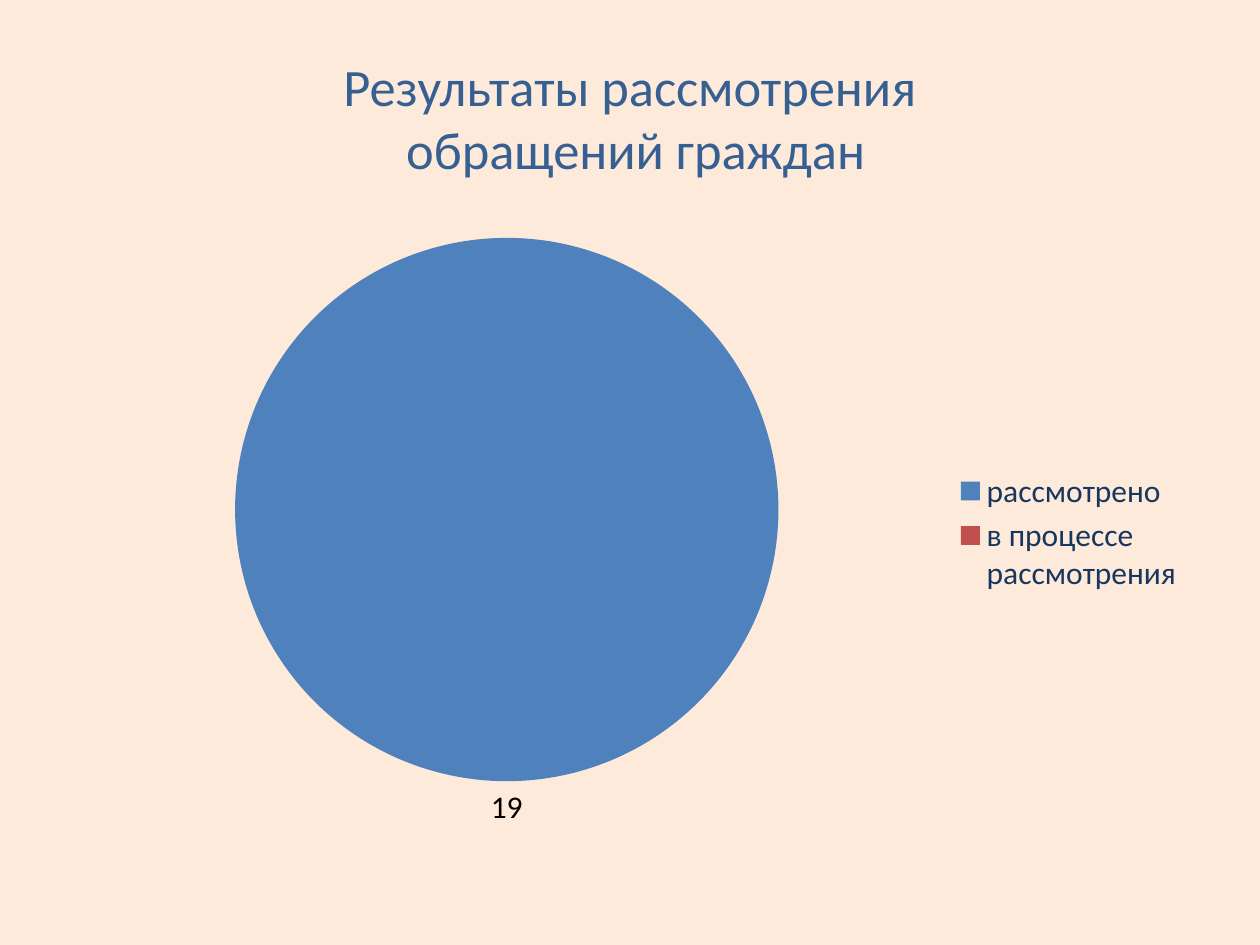
"""Build a slide with a pie chart of the outcomes of citizens' appeals."""
from typing import NamedTuple

from pptx import Presentation
from pptx.chart.chart import Chart
from pptx.chart.data import CategoryChartData as ChartData
from pptx.dml.color import RGBColor as Rgb
from pptx.enum.chart import XL_CHART_TYPE as Kind
from pptx.enum.chart import XL_LABEL_POSITION as Spot
from pptx.enum.chart import XL_LEGEND_POSITION as Side
from pptx.enum.text import MSO_ANCHOR as Anchor
from pptx.enum.text import PP_ALIGN as Align
from pptx.slide import Slide
from pptx.text.text import Font
from pptx.util import Inches, Pt

FONT = "Calibri"
LEFT, WIDTH = Inches(0.5), Inches(9)
COLORS = {
    "back": "FDEADA",
    "title": "376092",
    "label": "000000",
    "legend": "17375E",
    "done": "4F81BD",
    "open": "C0504D",
}


class Slice(NamedTuple):
    name: str
    count: int
    color: str


SLICES = [
    Slice("рассмотрено", 19, "done"),
    Slice("в процессе рассмотрения", 0, "open"),
]


def tint(key: str) -> Rgb:
    """Return the named colour."""
    return Rgb.from_string(COLORS[key])


def style(font: Font, size: int, key: str) -> None:
    """Set the face, size and colour of a font."""
    font.name, font.size = FONT, Pt(size)
    font.color.rgb = tint(key)


def add_title(slide: Slide, text: str) -> None:
    """Place and format the title."""
    title = slide.shapes.title
    title.left, title.top = LEFT, Inches(0.3)
    title.width, title.height = WIDTH, Inches(1.25)
    frame = title.text_frame
    frame.text = text
    frame.word_wrap = True
    frame.vertical_anchor = Anchor.MIDDLE
    para = frame.paragraphs[0]
    para.alignment = Align.CENTER
    style(para.font, 30, "title")


def add_pie(slide: Slide, slices: list[Slice]) -> Chart:
    """Draw the pie with its legend and the labels of nonzero slices."""
    data = ChartData()
    data.categories = [part.name for part in slices]
    data.add_series("Series 1", [part.count for part in slices])
    chart = slide.shapes.add_chart(
        Kind.PIE, LEFT, Inches(1.75), WIDTH, Inches(4.95), data
    ).chart
    chart.has_title = False
    style(chart.font, 18, "label")

    chart.has_legend = True
    chart.legend.position = Side.RIGHT
    chart.legend.include_in_layout = False
    style(chart.legend.font, 18, "legend")

    plot = chart.plots[0]
    plot.vary_by_categories = True
    for i, part in enumerate(slices):
        fill = plot.series[0].points[i].format.fill
        fill.solid()
        fill.fore_color.rgb = tint(part.color)

    labels = plot.series[0].data_labels
    labels.show_value = True
    labels.position = Spot.OUTSIDE_END
    labels.number_format = "0;;"
    labels.number_format_is_linked = False
    style(labels.font, 18, "label")
    return chart


def main() -> None:
    """Build and save the slide."""
    deck = Presentation()
    deck.slide_width, deck.slide_height = Inches(10), Inches(7.5)
    slide = deck.slides.add_slide(deck.slide_layouts[5])
    back = slide.background.fill
    back.solid()
    back.fore_color.rgb = tint("back")
    add_title(slide, "Результаты рассмотрения\v обращений граждан")
    add_pie(slide, SLICES)
    deck.save("out.pptx")


if __name__ == "__main__":
    main()
